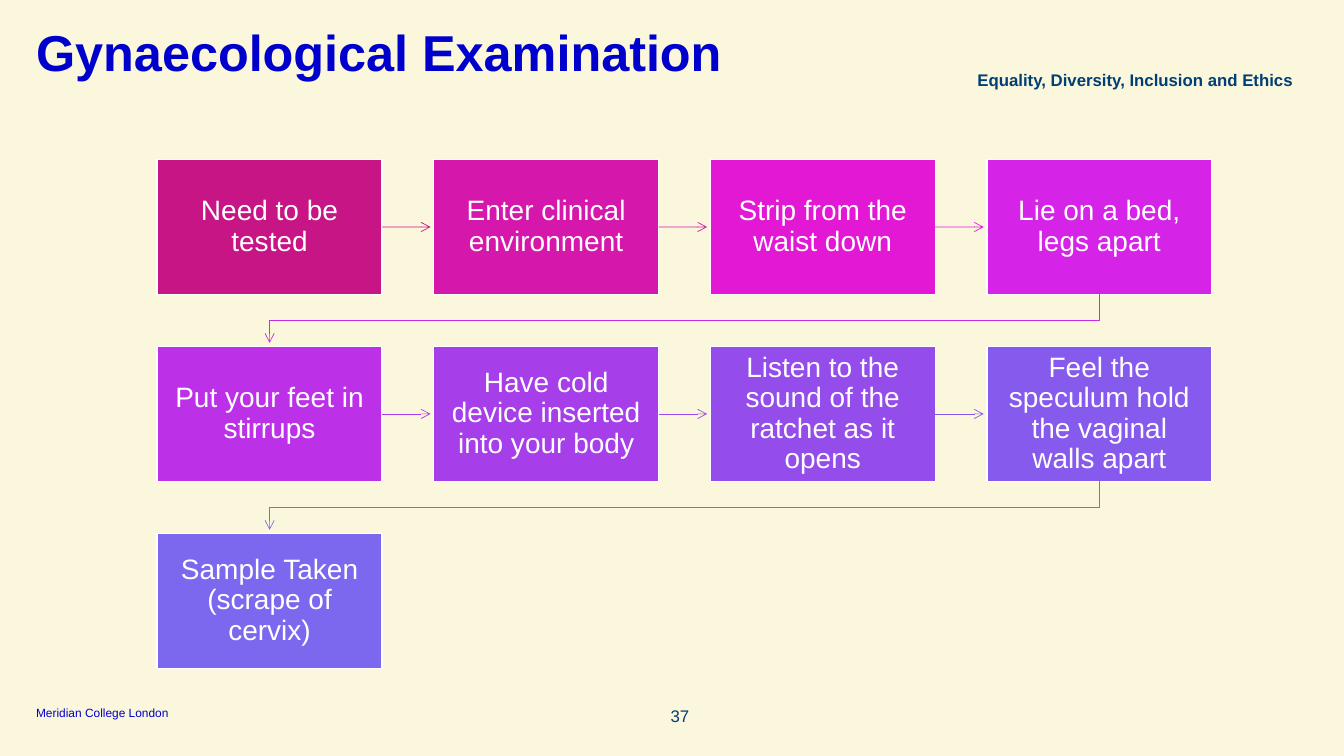
from dataclasses import dataclass

from lxml import etree
from pptx import Presentation
from pptx import util as u
from pptx.dml.color import RGBColor
from pptx.enum import shapes, text
from pptx.oxml import ns


@dataclass(frozen=True)
class Theme:
    font: str = "Arial"
    background: str = "FBF7DC"
    heading: str = "0000CD"
    detail: str = "003E74"
    white: str = "FFFFFF"
    title_size: float = 36
    step_size: float = 20
    detail_size: float = 12
    footer_size: float = 8.5
    border_width: float = 1
    arrow_width: float = 0.5


THEME = Theme()

COLUMNS = 4
GRID_LEFT, GRID_TOP = 3.96, 4.02
COLUMN_PITCH, ROW_PITCH = 6.97, 4.71
BOX_WIDTH, BOX_HEIGHT = 5.67, 3.4
ARROW_LENGTH = 1.22
TURN_DROP = 0.66

STEPS = [
    ("Need to be tested", "C71585", "C71585"),
    ("Enter clinical environment", "D517AB", "D717B1"),
    ("Strip from the waist down", "E218D5", "E619E2"),
    ("Lie on a bed, legs apart", "D523E7", "CA29E8"),
    ("Put your feet in stirrups", "BC31E8", "AF38E9"),
    ("Have cold device inserted into your body", "A63EEA", "9848EB"),
    ("Listen to the sound of the ratchet as it opens", "944CEB", "8758EC"),
    ("Feel the speculum hold the vaginal walls apart", "855AED", "7B68EE"),
    ("Sample Taken (scrape of cervix)", "7B68EE", None),
]


def write_text(shape, words, size, color, align, anchor, spacing, bold=False, inset=0):
    frame = shape.text_frame
    frame.text = words
    frame.word_wrap = True
    frame.vertical_anchor = anchor
    frame.margin_left = frame.margin_right = u.Cm(inset)
    frame.margin_top = frame.margin_bottom = u.Cm(inset / 2)
    paragraph = frame.paragraphs[0]
    paragraph.alignment = align
    paragraph.line_spacing = spacing
    font = paragraph.runs[0].font
    font.name = THEME.font
    font.size = u.Pt(size)
    font.bold = bold
    font.color.rgb = RGBColor.from_string(color)


def add_label(slide, left, top, width, height, words, size, color,
              align=text.PP_ALIGN.LEFT, anchor=text.MSO_ANCHOR.TOP, spacing=1.0, bold=False):
    label = slide.shapes.add_textbox(u.Cm(left), u.Cm(top), u.Cm(width), u.Cm(height))
    write_text(label, words, size, color, align, anchor, spacing, bold)


def add_step(slide, left, top, words, fill):
    box = slide.shapes.add_shape(shapes.MSO_SHAPE.RECTANGLE, u.Cm(left), u.Cm(top),
                                 u.Cm(BOX_WIDTH), u.Cm(BOX_HEIGHT))
    box.shadow.inherit = False
    box.fill.solid()
    box.fill.fore_color.rgb = RGBColor.from_string(fill)
    box.line.color.rgb = RGBColor.from_string(THEME.white)
    box.line.width = u.Pt(THEME.border_width)
    write_text(box, words, THEME.step_size, THEME.white, text.PP_ALIGN.CENTER,
               text.MSO_ANCHOR.MIDDLE, 0.9, inset=0.41)
    return box


def style_arrow(arrow, color):
    arrow.line.color.rgb = RGBColor.from_string(color)
    arrow.line.width = u.Pt(THEME.arrow_width)
    properties = arrow.element.spPr
    outline = properties.find(ns.qn("a:ln"))
    etree.SubElement(outline, ns.qn("a:tailEnd"), type="arrow")
    etree.SubElement(properties, ns.qn("a:effectLst"))


def add_straight_arrow(slide, box, left, top, color):
    start = left + BOX_WIDTH
    middle = u.Cm(top + BOX_HEIGHT / 2)
    arrow = slide.shapes.add_connector(shapes.MSO_CONNECTOR.STRAIGHT, u.Cm(start), middle,
                                       u.Cm(start + ARROW_LENGTH), middle)
    arrow.begin_connect(box, 3)
    style_arrow(arrow, color)


def add_return_arrow(slide, left, top, color):
    start_x = left + BOX_WIDTH / 2
    end_x = GRID_LEFT + BOX_WIDTH / 2
    start_y = top + BOX_HEIGHT
    turn_y = start_y + TURN_DROP
    corners = [(start_x, turn_y), (end_x, turn_y), (end_x, start_y + ARROW_LENGTH)]
    builder = slide.shapes.build_freeform(u.Cm(start_x), u.Cm(start_y))
    builder.add_line_segments([(u.Cm(x), u.Cm(y)) for x, y in corners], close=False)
    arrow = builder.convert_to_shape()
    arrow.fill.background()
    style_arrow(arrow, color)


def add_flow(slide):
    for index, (words, fill, arrow_color) in enumerate(STEPS):
        row, column = divmod(index, COLUMNS)
        left = GRID_LEFT + column * COLUMN_PITCH
        top = GRID_TOP + row * ROW_PITCH
        box = add_step(slide, left, top, words, fill)
        if arrow_color is None:
            continue
        if column < COLUMNS - 1:
            add_straight_arrow(slide, box, left, top, arrow_color)
        else:
            add_return_arrow(slide, left, top, arrow_color)


def main():
    presentation = Presentation()
    presentation.slide_width = u.Cm(33.87)
    presentation.slide_height = u.Cm(19.05)
    slide = presentation.slides.add_slide(presentation.slide_layouts[6])
    slide.background.fill.solid()
    slide.background.fill.fore_color.rgb = RGBColor.from_string(THEME.background)

    add_label(slide, 0.91, 17.75, 3.94, 0.38, "Meridian College London",
              THEME.footer_size, THEME.heading, anchor=text.MSO_ANCHOR.BOTTOM)
    add_label(slide, 0.91, 0.71, 32.05, 1.04, "Gynaecological Examination",
              THEME.title_size, THEME.heading, spacing=0.9, bold=True)
    add_flow(slide)
    add_label(slide, 16.48, 17.75, 0.89, 0.38, "37", THEME.detail_size, THEME.detail,
              align=text.PP_ALIGN.RIGHT, spacing=1.05)
    add_label(slide, 23.9, 1.73, 8.69, 0.86, "Equality, Diversity, Inclusion and Ethics",
              THEME.detail_size, THEME.detail, align=text.PP_ALIGN.RIGHT, spacing=1.05, bold=True)

    presentation.save("out.pptx")


if __name__ == "__main__":
    main()
